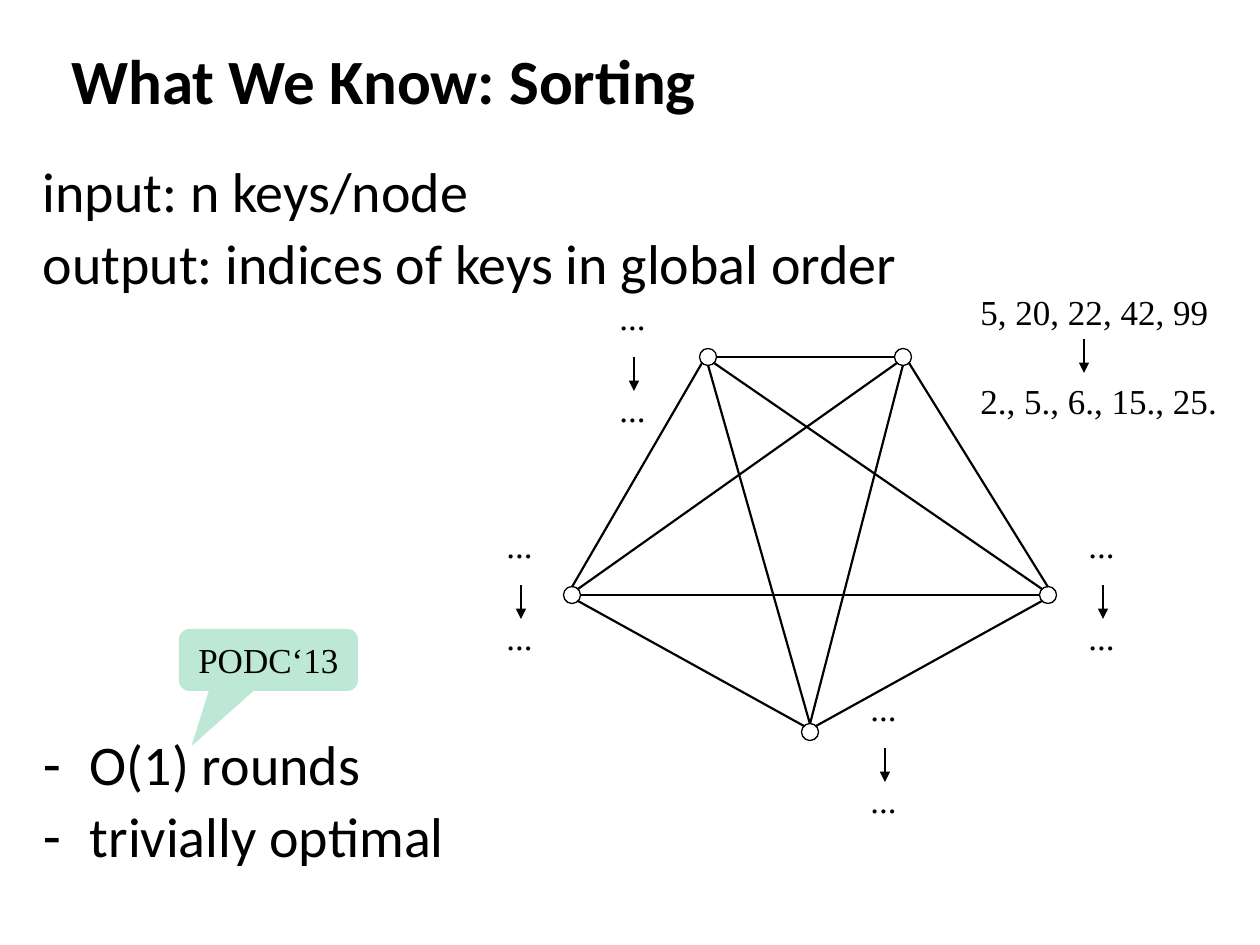
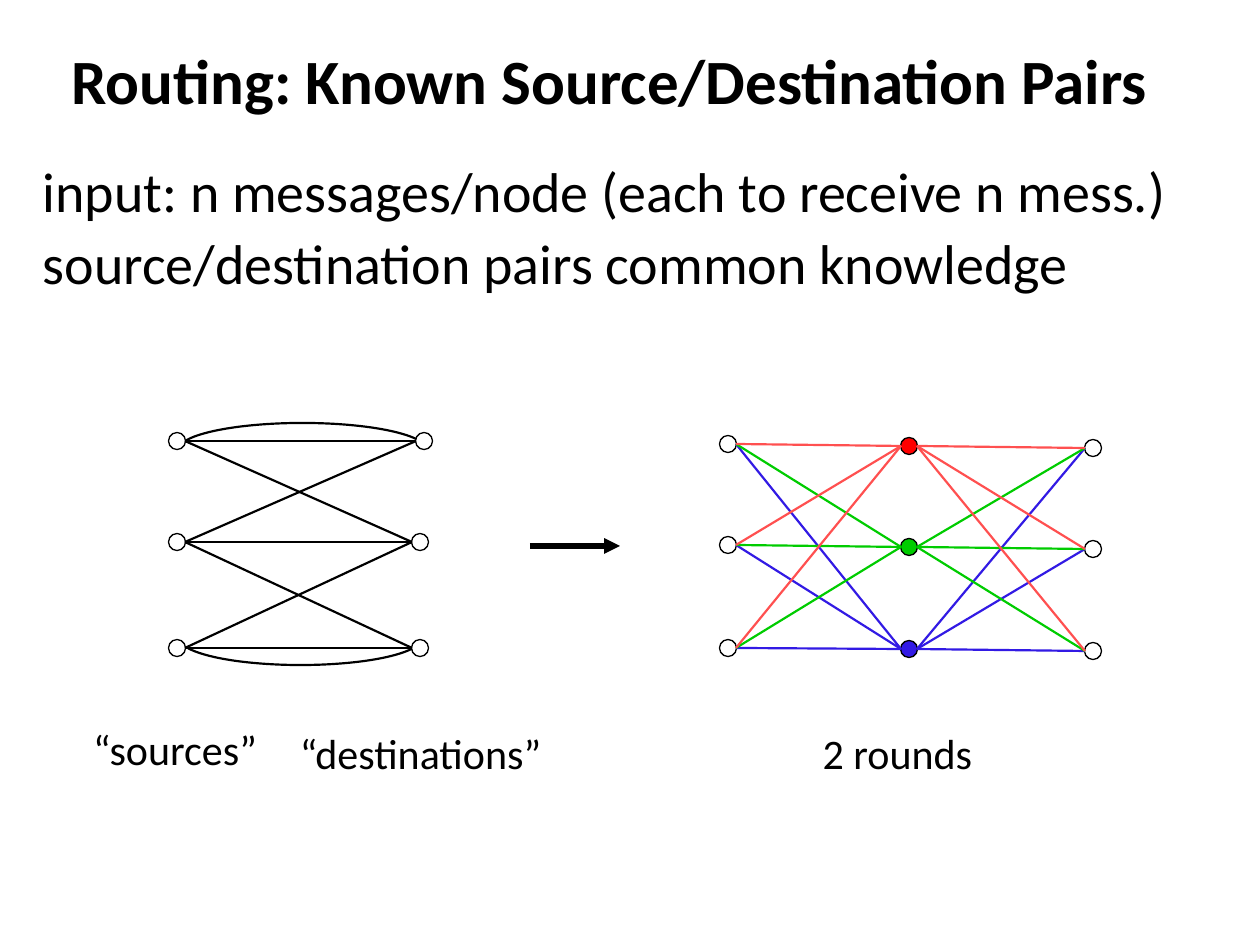
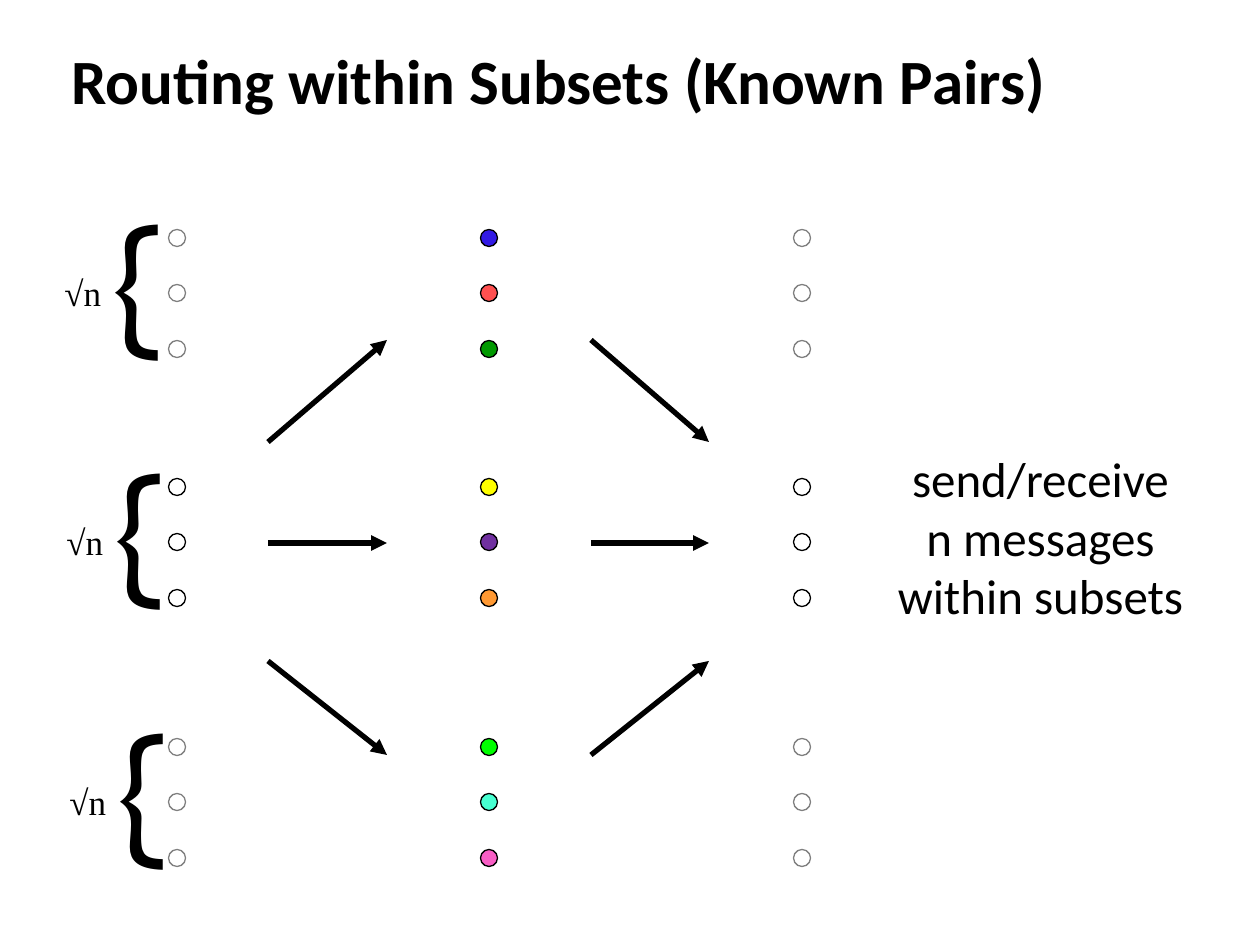
from itertools import product

from lxml.etree import SubElement
from pptx import Presentation
from pptx.dml.color import RGBColor
from pptx.enum.shapes import MSO_CONNECTOR as Link, MSO_SHAPE as Kind
from pptx.enum.text import MSO_ANCHOR as Anchor, MSO_AUTO_SIZE as Fit, PP_ALIGN as Align
from pptx.oxml.ns import qn
from pptx.util import Pt

PX = 914400 / 126
HEX = {
    "black": "000000", "mint": "AAE2CA", "red": "FF0000", "coral": "FF5050",
    "green": "00CC00", "blue": "321AE4", "yellow": "FFFF00", "purple": "7030A0",
    "orange": "FF9933", "leaf": "009900", "lime": "00FF00", "aqua": "47FFD1",
    "pink": "F85EC5",
}
SANS, SERIF, ROUND = "Calibri", "Times New Roman", "Cabin"
STYLE = {
    "title": {"name": SANS, "size": Pt(36), "bold": True},
    "body": {"name": SANS, "size": Pt(32)},
    "note": {"name": SANS, "size": Pt(28)},
    "label": {"name": SANS, "size": Pt(24)},
    "math": {"name": SERIF, "size": Pt(20)},
    "brace": {"name": ROUND, "size": Pt(88)},
}
TITLE, BODY = (59, 32, 1158, 94), (30, 158, 1188)
DOT = 17
SITE = {
    "n": (0, -8), "ne": (6, -6), "e": (8, 0), "se": (6, 6),
    "s": (0, 8), "sw": (-6, 6), "w": (-8, 0), "nw": (-6, -6),
}


def emu(*vals):
    return [round(v * PX) for v in vals]


def rgb(name):
    return RGBColor.from_string(HEX[name])


def place(shape, box):
    for key, val in zip(("left", "top", "width", "height"), emu(*box)):
        setattr(shape, key, val)


def write(shape, lines, style, align=Align.LEFT, anchor=Anchor.TOP, fit=Fit.NONE):
    """Fill a shape with one paragraph per line and return its paragraphs."""
    frame = shape.text_frame
    frame.text = "\n".join(lines)
    frame.auto_size, frame.vertical_anchor = fit, anchor
    for para in frame.paragraphs:
        para.alignment = align
        for run in para.runs:
            for key, val in STYLE[style].items():
                setattr(run.font, key, val)
            run.font.color.rgb = rgb("black")
    return frame.paragraphs


def start(deck, layout, title):
    slide = deck.slides.add_slide(deck.slide_layouts[layout])
    place(slide.shapes.title, TITLE)
    write(slide.shapes.title, [title], "title", anchor=Anchor.MIDDLE)
    return slide


def body(slide, high, lines, items=(), gap=0):
    """Write plain lines, then dashed items set off by a gap in points."""
    holder = slide.placeholders[1]
    place(holder, (*BODY, high))
    for i, para in enumerate(write(holder, [*lines, *items], "body")):
        para.line_spacing = 0.9
        if items and i == len(lines):
            para.space_before = Pt(gap)
        props = para._p.get_or_add_pPr()
        if i < len(lines):
            SubElement(props, qn("a:buNone"))
        else:
            SubElement(props, qn("a:buChar"), char="-")


def label(slide, box, lines, style="label"):
    """Add centred text that wraps in its box."""
    shape = slide.shapes.add_textbox(*emu(*box))
    shape.text_frame.word_wrap = True
    write(shape, lines, style, Align.CENTER, Anchor.MIDDLE)


def tag(slide, box, text, style="math"):
    """Add one unwrapped line of text."""
    shape = slide.shapes.add_textbox(*emu(*box))
    shape.text_frame.word_wrap = False
    write(shape, [text], style, fit=Fit.SHAPE_TO_FIT_TEXT)


def form(slide, kind, box, fill=None, width=0.75):
    shape = slide.shapes.add_shape(kind, *emu(*box))
    shape.shadow.inherit = False
    if fill:
        shape.fill.solid()
        shape.fill.fore_color.rgb = rgb(fill)
    else:
        shape.fill.background()
    if width:
        shape.line.color.rgb = rgb("black")
        shape.line.width = Pt(width)
    else:
        shape.line.fill.background()
    return shape


def fade(shape, pct):
    """Make the first colour of a shape partly see-through."""
    color = shape.element.spPr.find(".//" + qn("a:srgbClr"))
    SubElement(color, qn("a:alpha"), val=str(pct * 1000))


def node(slide, spot, fill=None):
    x, y = spot
    return form(slide, Kind.OVAL, (x - DOT / 2, y - DOT / 2, DOT, DOT), fill)


def arc(slide, box, first, last):
    shape = form(slide, Kind.ARC, box, width=1.25)
    shape.adjustments[0], shape.adjustments[1] = first, last


def line(slide, a, b, color="black", width=1.25, head=False):
    link = slide.shapes.add_connector(Link.STRAIGHT, *emu(*a, *b))
    link.line.color.rgb = rgb(color)
    link.line.width = Pt(width)
    if head:
        SubElement(link.line._get_or_add_ln(), qn("a:tailEnd"), type="triangle")
    SubElement(link.element.spPr, qn("a:effectLst"))


def site(spot, side):
    """Give the point on the rim of a node at a compass side."""
    return [c + d for c, d in zip(spot, SITE[side])]


def edge(slide, a, out, b, into, **look):
    line(slide, site(a, out), site(b, into), **look)


def swap(slide, x, y, texts=("...", "..."), wide=(52, 52), drop=92, shift=(27, 68)):
    """Show keys, an arrow down, and their indices."""
    for i, (text, w) in enumerate(zip(texts, wide)):
        tag(slide, (x, y + i * drop, w, 55), text)
    x, y = x + shift[0], y + shift[1]
    line(slide, (x, y), (x, y + 34), width=1.5, head=True)


def sorting(deck):
    slide = start(deck, 1, "What We Know: Sorting")
    body(slide, 737, ["input: n keys/node", "output: indices of keys in global order"],
         ["O(1) rounds", "trivially optimal"], gap=252)

    venue = form(slide, Kind.ROUNDED_RECTANGULAR_CALLOUT, (179, 629, 179, 62), "mint", 0)
    for i, val in enumerate((-0.43, 1.39, 0.17)):
        venue.adjustments[i] = val
    fade(venue, 79)
    write(venue, ["PODC‘13"], "math", Align.CENTER)

    spots = {"A": (708, 357), "B": (903, 357), "C": (1048, 595),
             "D": (810, 732), "E": (572, 595)}
    for spot in spots.values():
        node(slide, spot)
    edge(slide, spots["A"], "e", spots["B"], "w", width=0.75)
    for a, out, b, into in (
        ("B", "se", "C", "n"), ("C", "sw", "D", "ne"), ("E", "n", "A", "sw"),
        ("E", "ne", "B", "sw"), ("E", "e", "C", "w"), ("E", "se", "D", "nw"),
        ("D", "n", "B", "s"), ("D", "n", "A", "s"), ("C", "nw", "A", "se"),
    ):
        edge(slide, spots[a], out, spots[b], into)

    swap(slide, 968, 284, ("5, 20, 22, 42, 99", "2., 5., 6., 15., 25."),
         (256, 264), 89, (116, 55))
    for x, y in ((1076, 517), (858, 680), (494, 517), (607, 289)):
        swap(slide, x, y)


def routing(deck):
    slide = start(deck, 1, "Routing: Known Source/Destination Pairs")
    body(slide, 171, ["input: n messages/node (each to receive n mess.)",
                      "source/destination pairs common knowledge"])

    rows = (441, 542, 648)
    sources = [(177, y) for y in rows]
    targets = list(zip((424, 420, 420), rows))
    for spot in sources + targets:
        node(slide, spot)
    for i, j in product(range(3), repeat=2):
        if abs(i - j) < 2:
            edge(slide, sources[i], "e", targets[j], "w")
    arc(slide, (178, 423, 249, 54), 110.83, 212.62)
    arc(slide, (179, 611, 243, 54), 3.29, 105.37)
    line(slide, (530, 546), (620, 546), width=3, head=True)

    left = [(728, y) for y in (444, 545, 648)]
    mid = [(909, y) for y in (446, 547, 649)]
    right = [(1093, y) for y in (448, 549, 651)]
    for spot in left + right:
        node(slide, spot)
    for hub, color, fill in reversed(list(zip(
            mid, ("coral", "green", "blue"), ("red", "green", "blue")))):
        node(slide, hub, fill)
        for a, b in zip(left, right):
            edge(slide, a, "e", hub, "w", color=color)
            edge(slide, hub, "e", b, "w", color=color)

    label(slide, (74, 712, 202, 73), ["“sources”"])
    label(slide, (282, 716, 277, 73), ["“destinations”"])
    label(slide, (759, 716, 277, 73), ["2 rounds"])


def subsets(deck):
    slide = start(deck, 5, "Routing within Subsets (Known Pairs)")
    label(slide, (863, 413, 355, 247),
          ["send/receive", "n messages", "within subsets"], "note")

    sets = (
        (238, 52, ("blue", "coral", "leaf")),
        (487, 54, ("yellow", "purple", "orange")),
        (747, 57, ("lime", "aqua", "pink")),
    )
    for i, (top, x, fills) in enumerate(sets):
        for step, fill in zip((0, 55, 111), fills):
            node(slide, (489, top + step), fill)
            for side in (177, 802):
                dot = node(slide, (side, top + step))
                if i != 1:
                    fade(dot, 50)
        tag(slide, (x, top + 27, 63, 55), "√n")
        tag(slide, (x + 48, top - 58, 69, 199), "{", "brace")

    for near, far in ((442, 340), (543, 543), (661, 755)):
        line(slide, (268, near), (387, far), width=3, head=True)
        line(slide, (591, far), (709, near), width=3, head=True)


def main():
    deck = Presentation()
    deck.slide_width, deck.slide_height = emu(1260, 945)
    for build in (sorting, routing, subsets):
        build(deck)
    deck.save("out.pptx")


if __name__ == "__main__":
    main()
